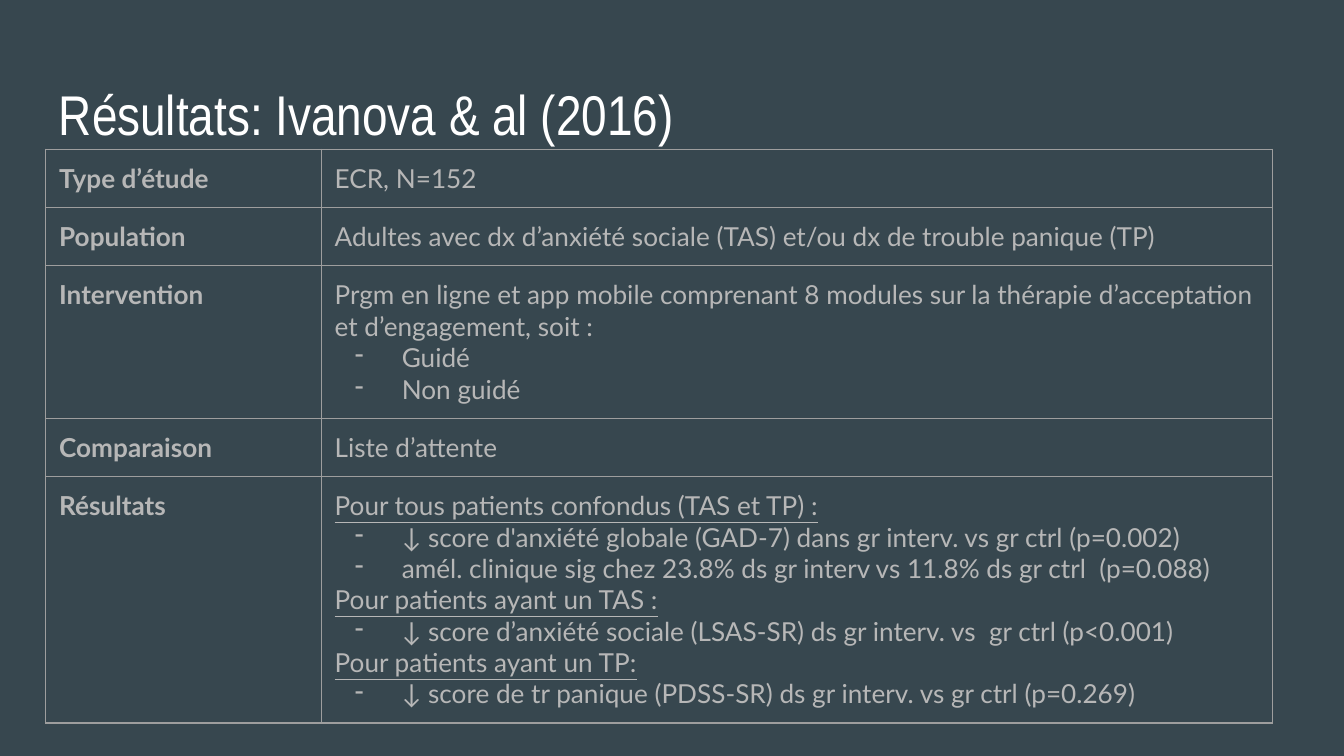
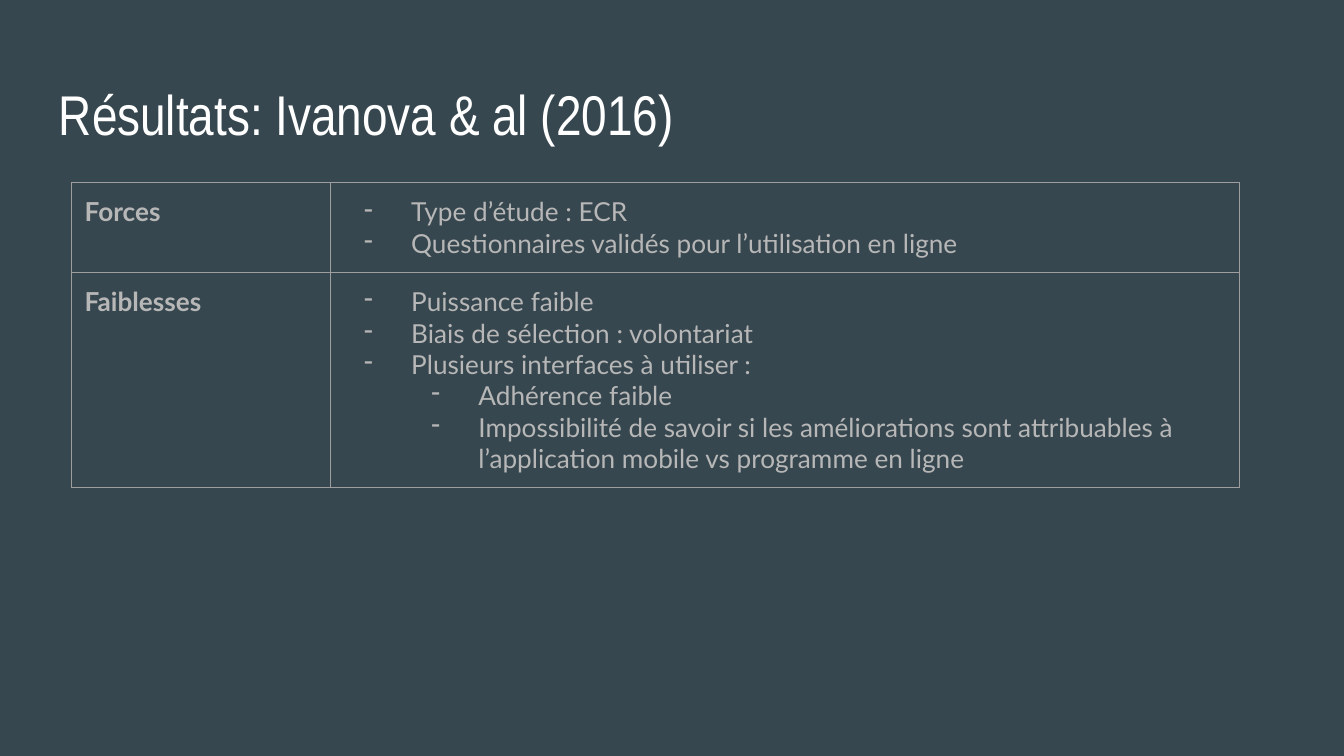
from lxml import etree
from pptx import Presentation
from pptx.dml.color import RGBColor
from pptx.oxml import ns
from pptx.util import Inches, Pt

SLATE = RGBColor(0x37, 0x47, 0x4F)
WHITE = RGBColor(0xFF, 0xFF, 0xFF)
SILVER = RGBColor(0xB7, 0xB7, 0xB7)
RULE = RGBColor(0x9E, 0x9E, 0x9E)

TITLE = dict(name="Arial Narrow", size=Pt(30), bold=False)
BODY = dict(name="Lato", size=Pt(14))
MARGINS = {f"margin_{side}": Inches(0.1) for side in ("left", "right", "top", "bottom")}
PLAIN, HEADING, DASH, SUBDASH = "plain", "heading", "dash", "subdash"
LEVELS = {DASH: 0, SUBDASH: 1}

STUDY = [
    ("Type d’étude", [(PLAIN, "ECR, N=152")]),
    ("Population", [
        (PLAIN, "Adultes avec dx d’anxiété sociale (TAS) et/ou dx de trouble panique (TP)")]),
    ("Intervention", [
        (PLAIN, "Prgm en ligne et app mobile comprenant 8 modules sur la thérapie "
                "d’acceptation et d’engagement, soit :"),
        (DASH, "Guidé"),
        (DASH, "Non guidé")]),
    ("Comparaison", [(PLAIN, "Liste d’attente")]),
    ("Résultats", [
        (HEADING, "Pour tous patients confondus (TAS et TP) :"),
        (DASH, "↓ score d'anxiété globale (GAD-7) dans gr interv. vs gr ctrl (p=0.002)"),
        (DASH, "amél. clinique sig chez 23.8% ds gr interv vs 11.8% ds gr ctrl  (p=0.088)"),
        (HEADING, "Pour patients ayant un TAS :"),
        (DASH, "↓ score d’anxiété sociale (LSAS-SR) ds gr interv. vs  gr ctrl (p<0.001)"),
        (HEADING, "Pour patients ayant un TP:"),
        (DASH, "↓ score de tr panique (PDSS-SR) ds gr interv. vs gr ctrl (p=0.269)")]),
]
APPRAISAL = [
    ("Forces", [
        (DASH, "Type d’étude : ECR"),
        (DASH, "Questionnaires validés pour l’utilisation en ligne")]),
    ("Faiblesses", [
        (DASH, "Puissance faible"),
        (DASH, "Biais de sélection : volontariat"),
        (DASH, "Plusieurs interfaces à utiliser :"),
        (SUBDASH, "Adhérence faible"),
        (SUBDASH, "Impossibilité de savoir si les améliorations sont attribuables à "
                  "l’application mobile vs programme en ligne")]),
]


def apply(target, values):
    """Set every attribute in values on target."""
    for key, value in values.items():
        setattr(target, key, value)


def add_color(parent, tag, color):
    """Append a colour holder element to parent."""
    holder = etree.SubElement(parent, ns.qn(tag))
    etree.SubElement(holder, ns.qn("a:srgbClr"), val=str(color))


class Deck:
    """Hold the shared style and the current slide."""

    def __init__(self):
        """Start an empty widescreen presentation."""
        self.prs = Presentation()
        apply(self.prs, dict(slide_width=Inches(10), slide_height=Inches(5.625)))
        self.slide = None

    def add_slide(self, title):
        """Add a slate slide with its title."""
        self.slide = self.prs.slides.add_slide(self.prs.slide_layouts[6])
        fill = self.slide.background.fill
        fill.solid()
        fill.fore_color.rgb = SLATE
        box = self.slide.shapes.add_textbox(
            Inches(0.34), Inches(0.49), Inches(9.32), Inches(0.63))
        apply(box.text_frame, dict(MARGINS, word_wrap=True))
        self.add_words(box.text_frame.paragraphs[0], title, TITLE, WHITE)

    def add_words(self, paragraph, words, font, color):
        """Add one formatted run."""
        run = paragraph.add_run()
        run.text = words
        apply(run.font, font)
        run.font.color.rgb = color

    def dash(self, paragraph, level):
        """Give a paragraph a hanging dash."""
        paragraph.level = level
        props = paragraph._p.get_or_add_pPr()
        props.set("marL", str(Inches(0.5 * (level + 1))))
        props.set("indent", str(Inches(-0.35)))
        add_color(props, "a:buClr", SILVER)
        etree.SubElement(props, ns.qn("a:buChar"), char="-")

    def cell(self, cell, lines, bold=False):
        """Fill a table cell with lines and outline it."""
        apply(cell, MARGINS)
        props = cell._tc.get_or_add_tcPr()
        for side in "LRTB":
            edge = etree.SubElement(props, ns.qn(f"a:ln{side}"), w=str(Pt(0.75)))
            add_color(edge, "a:solidFill", RULE)
        cell.fill.background()
        frame = cell.text_frame
        for index, (kind, words) in enumerate(lines):
            paragraph = frame.add_paragraph() if index else frame.paragraphs[0]
            if kind in LEVELS:
                self.dash(paragraph, LEVELS[kind])
            font = dict(BODY, bold=bold, underline=kind == HEADING)
            self.add_words(paragraph, words, font, SILVER)

    def table(self, entries, left, top, widths, row_height, height):
        """Add a two-column table of bold labels and details."""
        frame = self.slide.shapes.add_table(
            len(entries), 2, Inches(left), Inches(top), Inches(sum(widths)), Inches(height))
        grid = frame.table
        apply(grid, dict(first_row=False, horz_banding=False))
        for column, width in zip(grid.columns, widths):
            column.width = Inches(width)
        for row, (label, details) in zip(grid.rows, entries):
            row.height = Inches(row_height)
            self.cell(row.cells[0], [(PLAIN, label)], bold=True)
            self.cell(row.cells[1], details)
        frame.height = Inches(height)


def main():
    """Build both result slides."""
    deck = Deck()
    title = "Résultats: Ivanova & al (2016)"
    deck.add_slide(title)
    deck.table(STUDY, 0.34, 1.11, (2.05, 7.08), 0.42, 4.27)
    deck.add_slide(title)
    deck.table(APPRAISAL, 0.53, 1.36, (1.93, 6.76), 0.43, 2.27)
    deck.prs.save("out.pptx")


if __name__ == "__main__":
    main()
